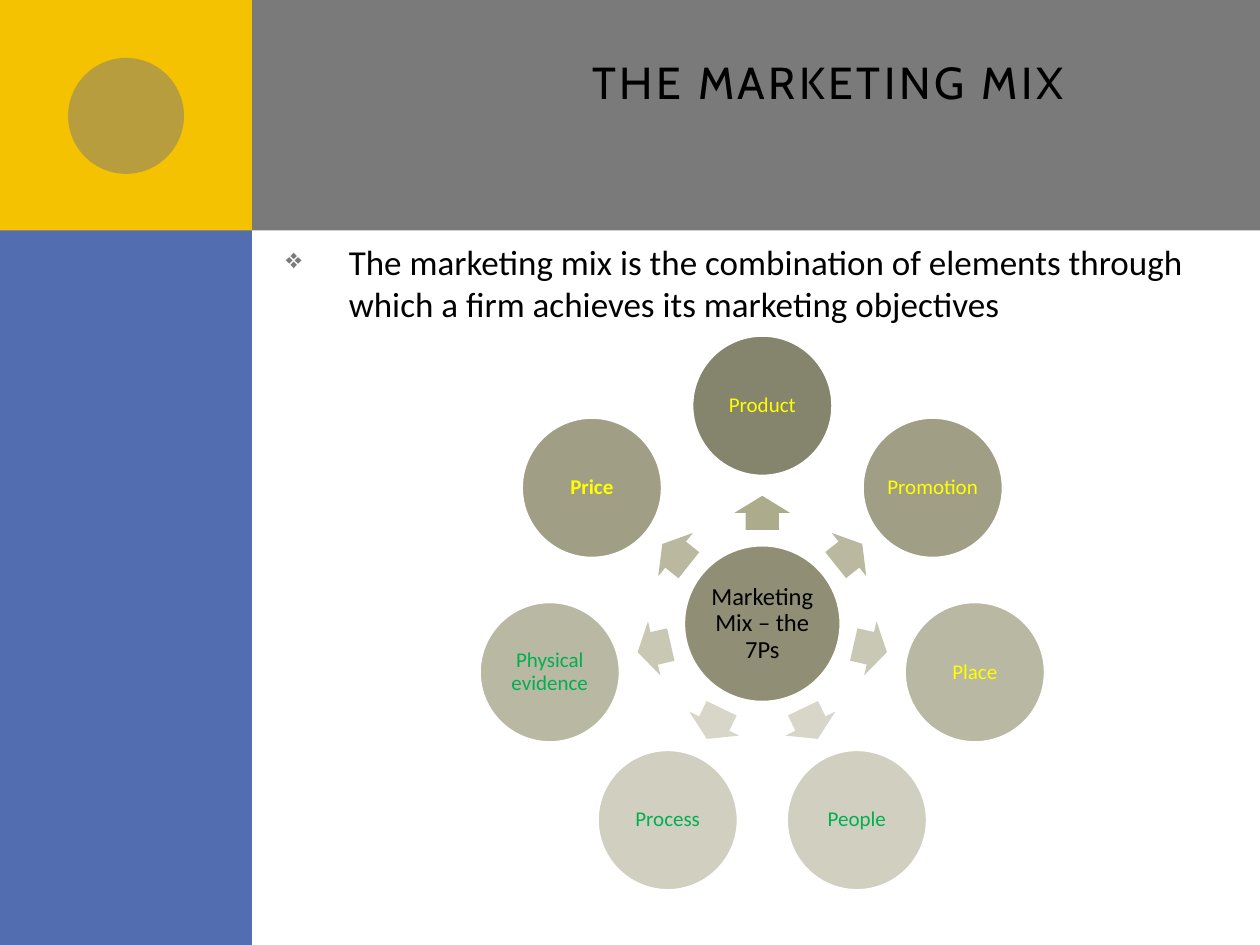
"""Build a slide showing the marketing mix as a radial diagram of seven Ps."""
import math

from lxml import etree
from pptx import Presentation, util as u
from pptx.dml.color import RGBColor
from pptx.enum import shapes, text
from pptx.oxml.ns import qn

IN = u.Inches
GEO = shapes.MSO_SHAPE


def rgb(value):
    return RGBColor.from_string(value)


def add_shape(geometry, x, y, w, h, fill, line=None):
    sp = s.shapes.add_shape(geometry, IN(x), IN(y), IN(w), IN(h))
    sp.shadow.inherit = False
    sp.fill.solid()
    sp.fill.fore_color.rgb = rgb(fill)
    if line:
        sp.line.color.rgb = rgb(line)
        sp.line.width = u.Pt(4)
    else:
        sp.line.fill.background()
    return sp


def add_text(sp, words, color, para, font, frame):
    tf = sp.text_frame
    p = tf.paragraphs[0]
    r = p.add_run()
    r.text = words
    r.font.color.rgb = rgb(color)
    for target, values in ((tf, frame), (p, para), (r.font, font)):
        for name, value in values.items():
            setattr(target, name, value)
    return p, r


prs = Presentation()
prs.slide_width, prs.slide_height = IN(10), IN(7.5)
s = prs.slides.add_slide(prs.slide_layouts[6])

add_shape(GEO.RECTANGLE, 0.5, 0, 9.5, 1.83, "7A7A7A")
add_shape(GEO.RECTANGLE, 0, 0, 2, 7.5, "526DB0")
add_shape(GEO.RECTANGLE, 0, 0, 2, 1.83, "F5C201")
dot = add_shape(GEO.OVAL, 0.54, 0.46, 0.92, 0.92, "7A7A7A")
dot_color = dot.fill._xPr.find(qn("a:solidFill"))[0]
etree.SubElement(dot_color, qn("a:alpha"), val="50000")

title = s.shapes.add_textbox(IN(2.67), IN(0.25), IN(6.83), IN(1.25))
p, r = add_text(
    title, "the marketing mix", "000000",
    {"alignment": text.PP_ALIGN.RIGHT},
    {"size": u.Pt(32), "name": "Cabin"},
    {"word_wrap": True, "vertical_anchor": text.MSO_ANCHOR.MIDDLE, "margin_right": IN(0.56)},
)
r.font._element.set("spc", "200")
r.font._element.set("cap", "small")
p.add_line_break()
etree.SubElement(p._p, qn("a:endParaRPr"), sz="3200")

body = s.shapes.add_textbox(IN(2.17), IN(1.86), IN(7.33), IN(4.84))
p, r = add_text(
    body,
    "The marketing mix is the combination of elements through which a firm "
    "achieves its marketing objectives",
    "000000",
    {"space_before": u.Pt(18)},
    {"size": u.Pt(20), "name": "Calibri"},
    {"word_wrap": True},
)
pPr = p._p.get_or_add_pPr()
pPr.set("marL", str(IN(0.5)))
pPr.set("indent", str(-IN(0.5)))
bullet_color = etree.SubElement(pPr, qn("a:buClr"))
etree.SubElement(bullet_color, qn("a:srgbClr"), val="7A7A7A")
etree.SubElement(pPr, qn("a:buSzPct"), val="80000")
etree.SubElement(pPr, qn("a:buChar"), char="❖")

cx, cy = 6.05, 4.95
node_radius, arrow_radius = 1.73, 0.88
hub_size, node_size = 1.28, 1.15
arrow_w, arrow_h = 0.27, 0.44
para = {"alignment": text.PP_ALIGN.CENTER, "line_spacing": 0.9}
frame = {"word_wrap": True, "vertical_anchor": text.MSO_ANCHOR.MIDDLE}
frame.update({f"margin_{side}": IN(0.02) for side in ("left", "top", "right", "bottom")})

hub = add_shape(GEO.OVAL, cx - hub_size / 2, cy - hub_size / 2, hub_size, hub_size,
                "908F75", "FFFFFF")
add_text(hub, "Marketing Mix – the 7Ps", "000000", para,
         {"size": u.Pt(14), "name": "Calibri"}, frame)

yellow, green = "FFFF00", "00B050"
elements = [
    ("Product", yellow), ("Promotion", yellow), ("Place", yellow), ("People", green),
    ("Process", green), ("Physical evidence", green), ("Price", yellow),
]
shades = [("ACAB8B", "85846C"), ("BAB9A0", "A09F86"), ("C8C8B4", "B8B8A3"), ("D7D6C8", "D0CFC0")]

for i, (name, color) in enumerate(elements):
    turn = 360 / len(elements) * i - 90
    dx, dy = math.cos(math.radians(turn)), math.sin(math.radians(turn))
    arrow_fill, node_fill = shades[min(i, len(elements) - i)]

    arrow = add_shape(GEO.RIGHT_ARROW, cx + arrow_radius * dx - arrow_w / 2,
                      cy + arrow_radius * dy - arrow_h / 2, arrow_w, arrow_h, arrow_fill)
    arrow.adjustments[0], arrow.adjustments[1] = 0.6, 0.5
    arrow.rotation = turn % 360

    node = add_shape(GEO.OVAL, cx + node_radius * dx - node_size / 2,
                     cy + node_radius * dy - node_size / 2, node_size, node_size,
                     node_fill, "FFFFFF")
    add_text(node, name, color, para,
             {"size": u.Pt(12), "name": "Calibri", "bold": name == "Price"}, frame)

prs.save("out.pptx")
